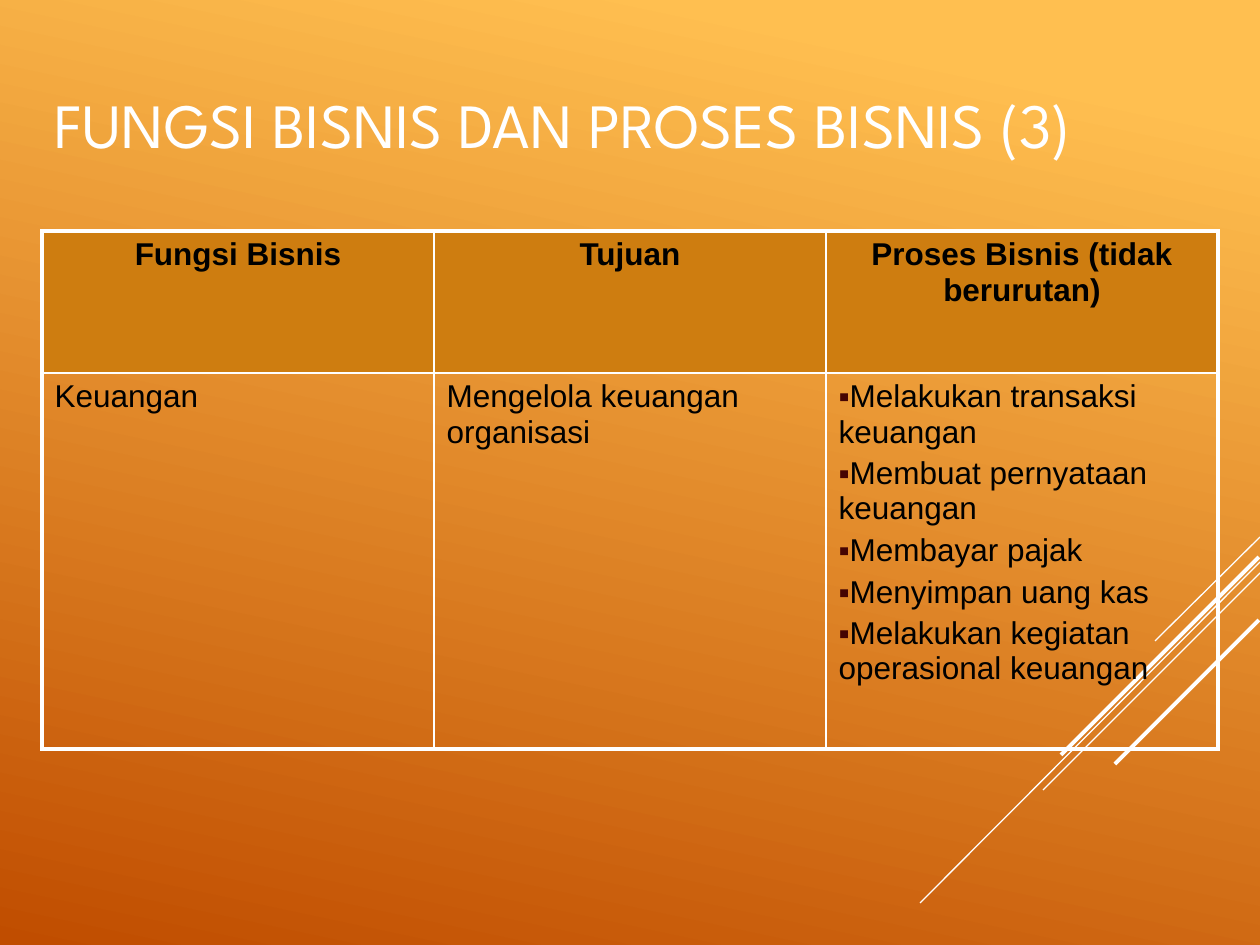
from lxml import etree
from pptx import Presentation
from pptx.dml.color import RGBColor
from pptx.enum.shapes import MSO_CONNECTOR
from pptx.enum.text import MSO_ANCHOR, PP_ALIGN
from pptx.oxml.ns import qn
from pptx.util import Emu, Pt

STRAIGHT = MSO_CONNECTOR.STRAIGHT
MIDDLE = MSO_ANCHOR.MIDDLE
LEFT, CENTER = PP_ALIGN.LEFT, PP_ALIGN.CENTER
EMU_PER_PX = 914400 / 126

WHITE, BLACK = "FFFFFF", "000000"
HEADER_FILL, BULLET_COLOR = "CE7D10", "460402"
OUTER, INNER = 2.25, 1

TITLE = "FUNGSI BISNIS DAN PROSES BISNIS (3)"
HEADERS = ["Fungsi Bisnis", "Tujuan", "Proses Bisnis (tidak berurutan)"]
PROCESSES = [
    "Melakukan transaksi keuangan",
    "Membuat pernyataan keuangan",
    "Membayar pajak",
    "Menyimpan uang kas",
    "Melakukan kegiatan operasional keuangan",
]
FINANCE = ["Keuangan", "Mengelola keuangan organisasi", PROCESSES]

# start x, start y, end x, end y, width in points
DIAGONALS = [
    (1260, 537, 1155, 641, 0.75),
    (1260, 562, 920, 903, 0.75),
    (1260, 573, 1043, 790, 0.75),
    (1259, 557, 1061, 755, 2.25),
    (1259, 620, 1115, 764, 2.25),
]


def px(length):
    return Emu(round(length * EMU_PER_PX))


def color(hex_value):
    return RGBColor.from_string(hex_value)


def add_bullet(paragraph, font):
    properties = paragraph._p.get_or_add_pPr()
    properties.set("marL", "0")
    properties.set("indent", "0")
    bullet_color = etree.SubElement(properties, qn("a:buClr"))
    etree.SubElement(bullet_color, qn("a:srgbClr"), val=BULLET_COLOR)
    etree.SubElement(properties, qn("a:buSzPct"), val="100000")
    etree.SubElement(properties, qn("a:buFont"), typeface=font)
    etree.SubElement(properties, qn("a:buChar"), char="▪")


def write(frame, text, size=18, font="Arial", ink=BLACK, bold=False,
          align=LEFT, before=0.0):
    """Fill a text frame; a list becomes one bulleted paragraph per item."""
    bulleted = isinstance(text, list)
    for index, line in enumerate(text if bulleted else [text]):
        paragraph = frame.add_paragraph() if index else frame.paragraphs[0]
        paragraph.alignment = align
        paragraph.space_before = Pt(before)
        if bulleted:
            add_bullet(paragraph, font)
        run = paragraph.add_run()
        run.text = line
        run.font.size = Pt(size)
        run.font.name = font
        run.font.bold = bold
        run.font.color.rgb = color(ink)


def set_borders(cell, widths):
    """Draw white cell borders; widths are left, right, top, bottom."""
    properties = cell._tc.get_or_add_tcPr()
    for position, (side, width) in enumerate(zip("LRTB", widths)):
        border = etree.Element(qn(f"a:ln{side}"), w=str(Pt(width)))
        fill = etree.SubElement(border, qn("a:solidFill"))
        etree.SubElement(fill, qn("a:srgbClr"), val=WHITE)
        properties.insert(position, border)


class SlideBuilder:
    def __init__(self, slide):
        self.slide = slide

    def background(self, stops, angle):
        fill = self.slide.background.fill
        fill.gradient()
        fill.gradient_angle = 360 - angle
        for stop, (position, shade) in zip(fill.gradient_stops, stops):
            stop.position = position
            stop.color.rgb = color(shade)

    def line(self, x1, y1, x2, y2, width):
        connector = self.slide.shapes.add_connector(
            STRAIGHT, px(x1), px(y1), px(x2), px(y2))
        connector.line.color.rgb = color(WHITE)
        connector.line.width = Pt(width)
        etree.SubElement(connector._element.spPr, qn("a:effectLst"))

    def title(self, text, x, y, width, height):
        box = self.slide.shapes.add_textbox(px(x), px(y), px(width), px(height))
        box.text_frame.word_wrap = True
        box.text_frame.vertical_anchor = MIDDLE
        write(box.text_frame, text, size=36, font="League Spartan", ink=WHITE)

    def table(self, rows, x, y, column_width, row_heights):
        last_row, last_column = len(rows) - 1, len(rows[0]) - 1
        table = self.slide.shapes.add_table(
            len(rows), len(rows[0]), px(x), px(y),
            px(column_width * len(rows[0])), px(sum(row_heights))).table
        table.first_row = table.horz_banding = False
        for column in table.columns:
            column.width = px(column_width)
        for r, (texts, height) in enumerate(zip(rows, row_heights)):
            table.rows[r].height = px(height)
            header = r == 0
            for c, text in enumerate(texts):
                cell = table.cell(r, c)
                if header:
                    cell.fill.solid()
                    cell.fill.fore_color.rgb = color(HEADER_FILL)
                else:
                    cell.fill.background()
                edges = (c == 0, c == last_column, r == 0, r == last_row)
                set_borders(cell, [OUTER if edge else INNER for edge in edges])
                write(cell.text_frame, text, bold=header, before=3.6,
                      align=CENTER if header else LEFT)


def main():
    deck = Presentation()
    deck.slide_width, deck.slide_height = px(1260), px(945)
    builder = SlideBuilder(deck.slides.add_slide(deck.slide_layouts[6]))
    builder.background([(0.1, "FFBF50"), (1, "C04D00")], angle=102)
    for diagonal in DIAGONALS:
        builder.line(*diagonal)
    builder.title(TITLE, 42, 32, 1173, 183)
    builder.table([HEADERS, FINANCE], 42, 231, 392, [142, 376])
    deck.save("out.pptx")


if __name__ == "__main__":
    main()
